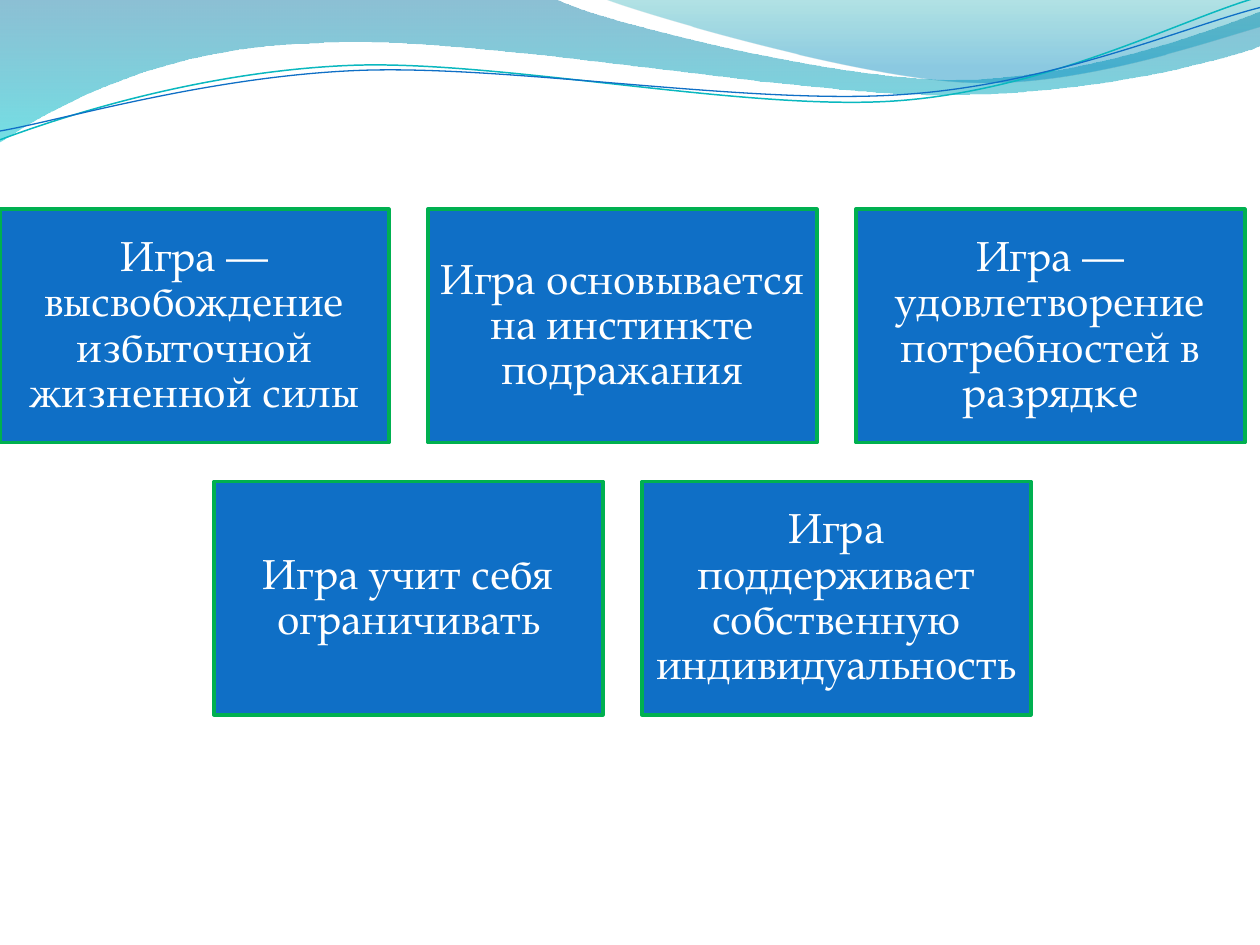
from lxml import etree
from pptx import Presentation
from pptx import util as u
from pptx.dml.color import RGBColor
from pptx.enum import shapes, text
from pptx.oxml.ns import qn

COLORS = {
    "blue": "0F6FC6", "green": "00B050", "white": "FFFFFF", "teal": "0AB8BF",
    "deep": "0074A1", "aqua": "00C6CF", "sea": "00A1A9", "sky": "008BBF",
}
FONT = {"name": "TeX Gyre Pagella", "size": u.Pt(24)}
FRAME = {"word_wrap": True, "vertical_anchor": text.MSO_ANCHOR.MIDDLE,
         **{f"margin_{side}": u.Inches(0.1) for side in ("left", "right", "top", "bottom")}}
PARAGRAPH = {"alignment": text.PP_ALIGN.CENTER, "line_spacing": 0.9}

THEORY_ROWS = [
    ["Игра — высвобождение избыточной жизненной силы",
     "Игра основывается на инстинкте подражания",
     "Игра — удовлетворение потребностей в разрядке"],
    ["Игра учит себя ограничивать",
     "Игра поддерживает собственную индивидуальность"],
]

# Each wave: points on a field 10 units wide; two numbers make a line, six a curve
WIDE_WAVE = [(0, 0), (4.4, -0.01), (4.76, 0.17, 6.64, 0.63, 7.58, 0.63),
             (8.53, 0.63, 9.58, 0.26, 10, 0.09), (10.01, 0.36),
             (9.83, 0.44, 8.7, 0.76, 7.46, 0.75), (6.22, 0.75, 3.82, 0.28, 2.57, 0.34),
             (1.29, 0.36, 0.46, 0.83, -0.01, 1.13), (0, 0)]
CORNER_WAVE = [(4.79, -0.01), (5.09, 0.11, 6.82, 0.62, 7.69, 0.65),
               (8.56, 0.69, 9.61, 0.32, 10, 0.21), (10, 0), (4.79, -0.01)]
TEAL_LINE = [(0, 1.11), (0.48, 0.93, 1.58, 0.57, 2.77, 0.52),
             (3.95, 0.47, 5.93, 0.89, 7.13, 0.8), (8.33, 0.71, 9.38, 0.15, 9.98, -0.02)]
BLUE_LINE = [(0, 1.04), (0.47, 0.96, 1.64, 0.61, 2.83, 0.56),
             (4.03, 0.51, 5.97, 0.84, 7.17, 0.75), (8.36, 0.67, 9.41, 0.21, 10, 0.06)]
# (outline, stops as position, colour, opacity in percent)
WAVES = [(WIDE_WAVE, [(0, "deep", 45), (1, "aqua", 55)]),
         (CORNER_WAVE, [(0, "sea", 30), (0.8, "sky", 45)])]
LINES = [(TEAL_LINE, "teal", 0.85), (BLUE_LINE, "blue", 0.75)]


def rgb(name):
    return RGBColor.from_string(COLORS[name])


def set_all(target, values):
    for key, value in values.items():
        setattr(target, key, value)


def add_outline(slide, box, outline, close):
    left, top, width = box
    unit = width / 10

    def place(x, y):
        return round(left + x * unit), round(top + y * unit)

    anchors = [place(*segment[-2:]) for segment in outline]
    builder = slide.shapes.build_freeform(*anchors[0], scale=1.0)
    builder.add_line_segments(anchors[1:], close=close)
    shape = builder.convert_to_shape()
    shape.shadow.inherit = False

    # Bend the segments that have control points
    sides = list(shape.element.spPr.iter(qn("a:lnTo")))
    for side, segment in zip(sides, outline[1:]):
        if len(segment) == 2:
            continue
        curve = etree.Element(qn("a:cubicBezTo"))
        for x, y in zip(segment[::2], segment[1::2]):
            across, down = place(x, y)
            point = etree.SubElement(curve, qn("a:pt"))
            point.set("x", str(across - shape.left))
            point.set("y", str(down - shape.top))
        side.getparent().replace(side, curve)
    return shape


def add_waves(slide, box):
    # Translucent gradient waves
    for outline, stops in WAVES:
        wave = add_outline(slide, box, outline, close=True)
        wave.line.fill.background()
        wave.fill.gradient()
        wave.fill.gradient_angle = 270
        for stop, (position, color, _) in zip(wave.fill.gradient_stops, stops):
            stop.position = position
            stop.color.rgb = rgb(color)
        tints = wave.element.spPr.iter(qn("a:srgbClr"))
        for tint, (_, _, opacity) in zip(tints, stops):
            etree.SubElement(tint, qn("a:alpha")).set("val", str(opacity * 1000))
    # Thin lines over the waves
    for outline, color, weight in LINES:
        thread = add_outline(slide, box, outline, close=False)
        thread.fill.background()
        thread.line.color.rgb = rgb(color)
        thread.line.width = u.Pt(weight)


def add_card(slide, box, theory):
    card = slide.shapes.add_shape(shapes.MSO_SHAPE.RECTANGLE, *map(round, box))
    card.shadow.inherit = False
    card.fill.solid()
    card.fill.fore_color.rgb = rgb("blue")
    card.line.color.rgb = rgb("green")
    card.line.width = u.Pt(2)
    set_all(card.text_frame, FRAME)
    paragraph = card.text_frame.paragraphs[0]
    set_all(paragraph, PARAGRAPH)
    run = paragraph.add_run()
    run.text = theory
    set_all(run.font, FONT)
    run.font.color.rgb = rgb("white")


def add_theories(slide, box):
    """Centred rows of cards; the gap is a tenth of a card's width."""
    left, top, width = box
    card_w = width / 3.2
    card_h, gap = 0.6 * card_w, 0.1 * card_w
    for row, theories in enumerate(THEORY_ROWS):
        count = len(theories)
        row_left = left + (width - count * card_w - (count - 1) * gap) / 2
        for column, theory in enumerate(theories):
            add_card(slide, (row_left + column * (card_w + gap),
                             top + row * (card_h + gap), card_w, card_h), theory)


def main():
    deck = Presentation()
    deck.slide_width, deck.slide_height = u.Inches(10), u.Inches(7.5)
    slide = deck.slides.add_slide(deck.slide_layouts[6])
    add_waves(slide, (0, 0, deck.slide_width))
    add_theories(slide, (0, u.Inches(1.66), deck.slide_width - u.Inches(0.12)))
    deck.save("out.pptx")


if __name__ == "__main__":
    main()
